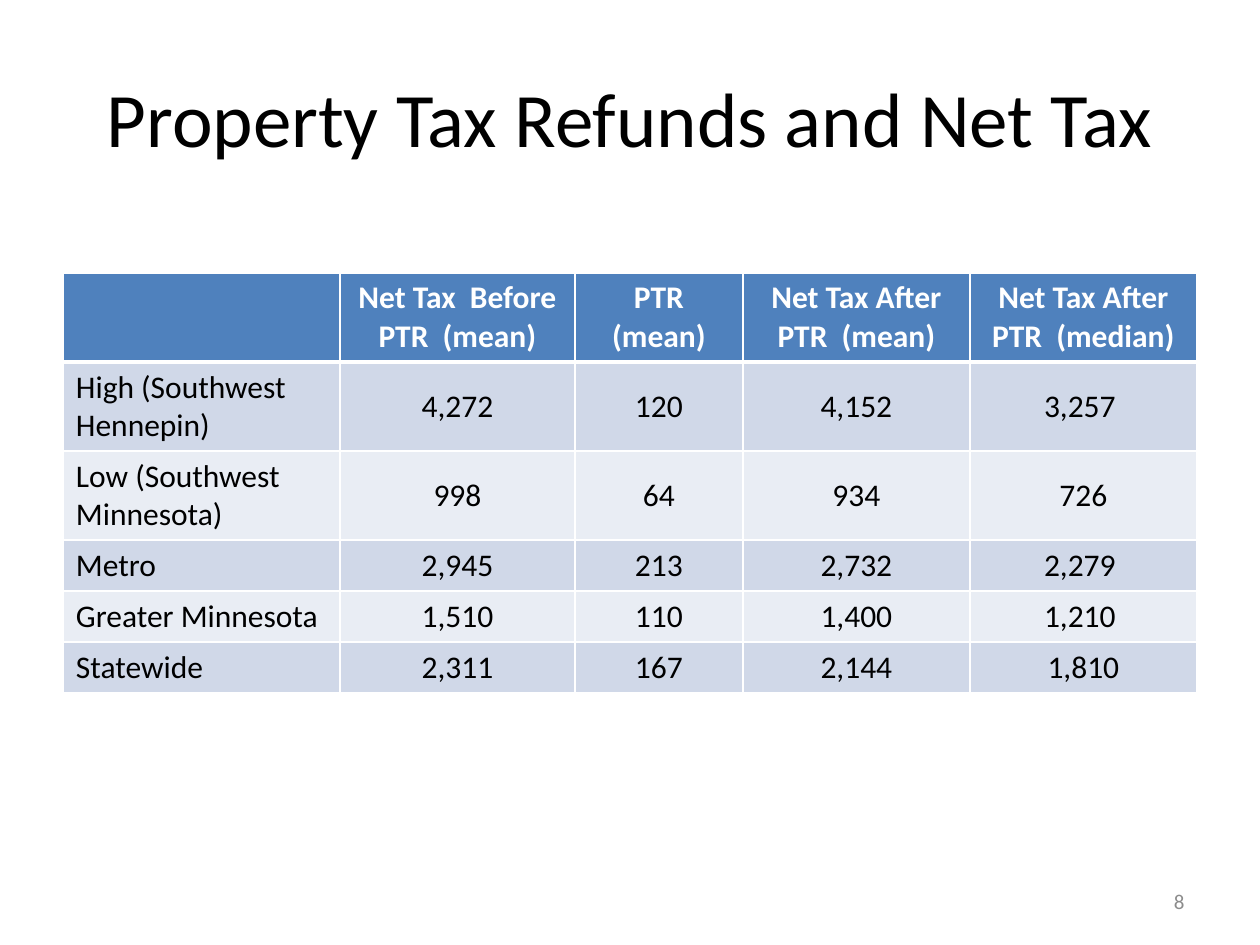
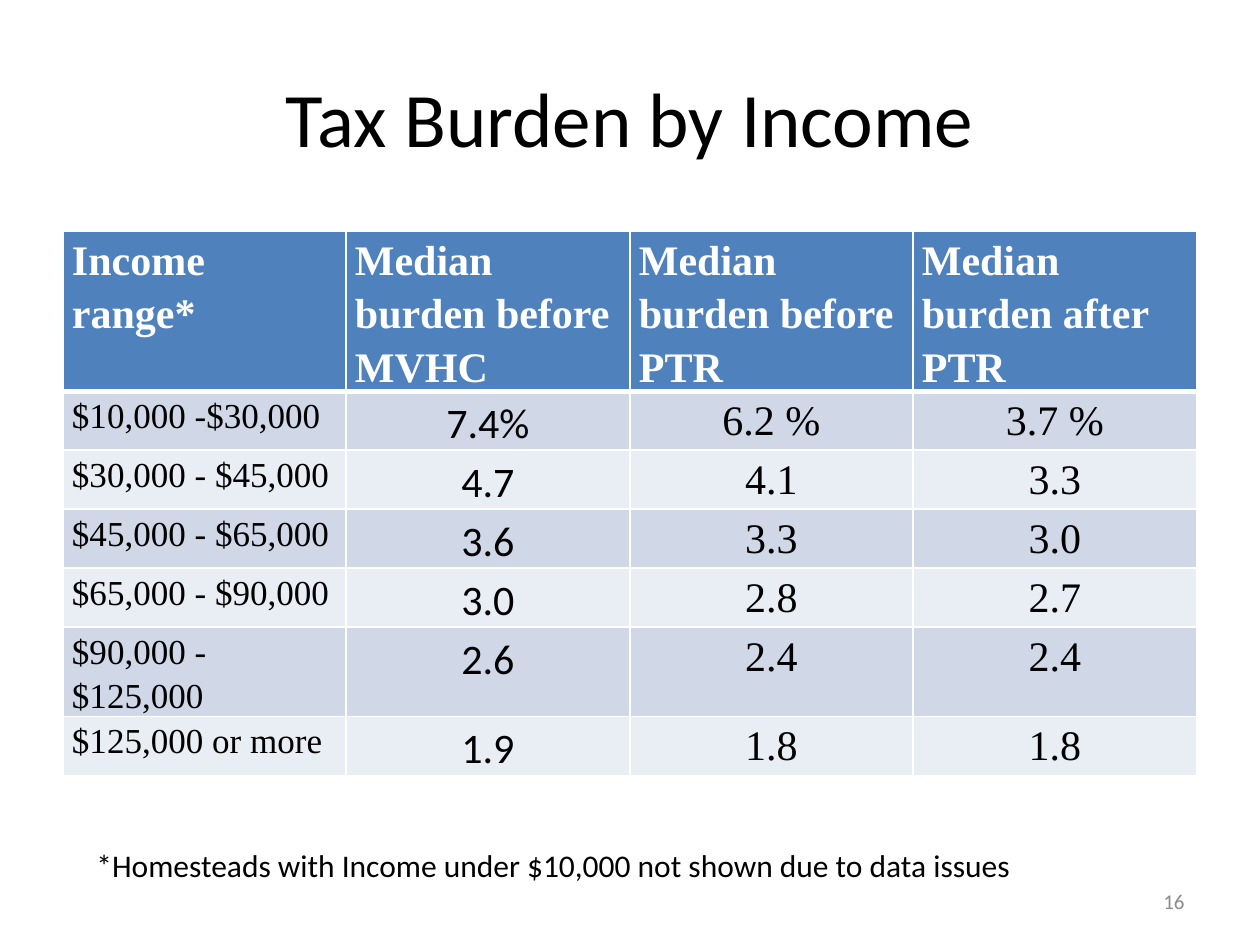
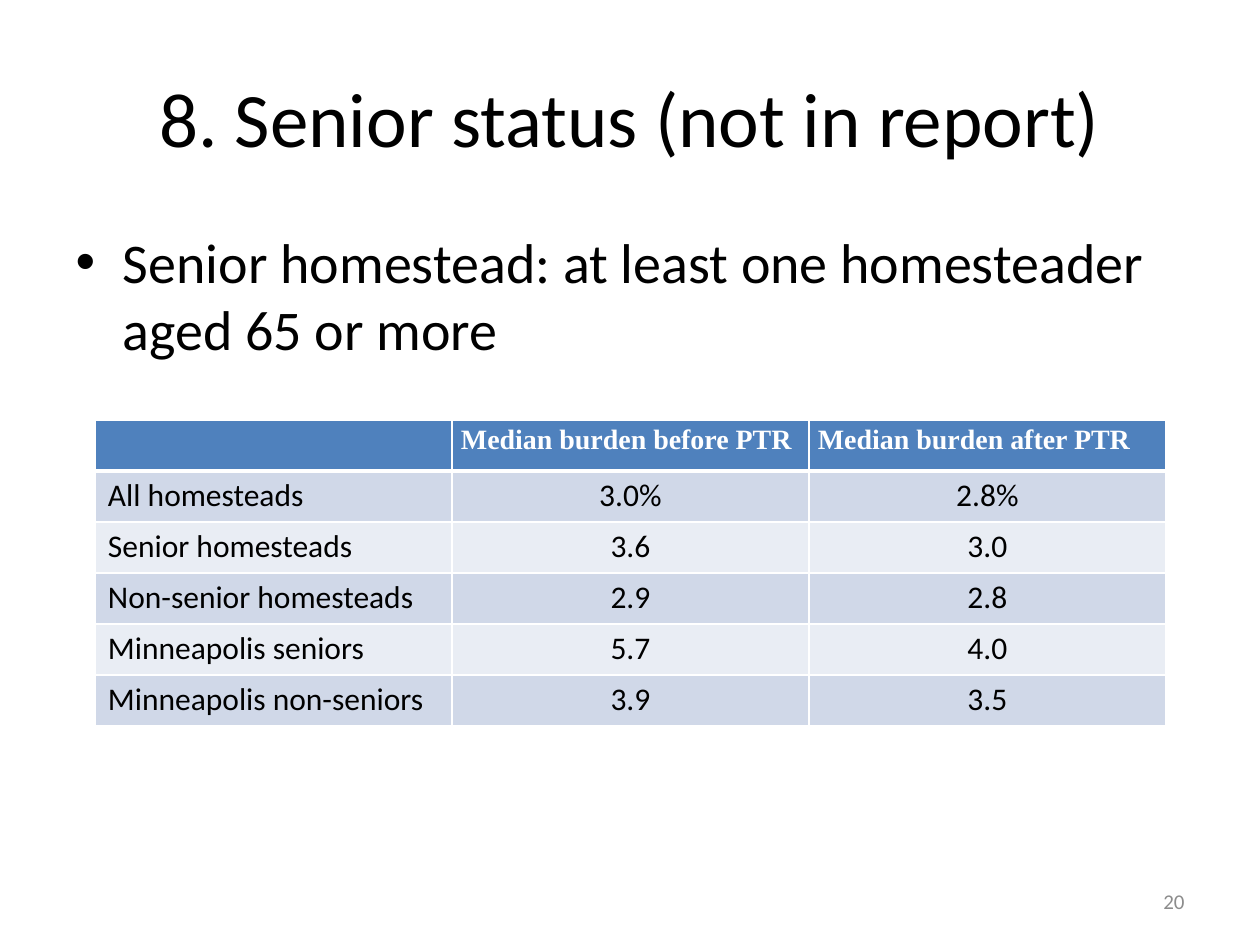
from dataclasses import dataclass

from lxml import etree
from pptx import Presentation
from pptx.dml.color import RGBColor
from pptx.enum.text import MSO_ANCHOR, MSO_AUTO_SIZE, PP_ALIGN
from pptx.oxml.ns import qn
from pptx.util import Emu, Pt

LEFT, CENTER, RIGHT = PP_ALIGN.LEFT, PP_ALIGN.CENTER, PP_ALIGN.RIGHT
TOP, MIDDLE = MSO_ANCHOR.TOP, MSO_ANCHOR.MIDDLE
FIXED, GROW = MSO_AUTO_SIZE.NONE, MSO_AUTO_SIZE.SHAPE_TO_FIT_TEXT
TITLE_AND_BODY, TITLE_ONLY = 1, 5
PX_PER_INCH = 126


@dataclass(frozen=True)
class Theme:
    sans: str = "Calibri"
    serif: str = "Times New Roman"
    ink: str = "000000"
    white: str = "FFFFFF"
    muted: str = "8C8C8C"
    header: str = "4F81BD"
    bands: tuple = ("D0D8E8", "E9EDF4")
    title_size: int = 44
    body_size: int = 32
    large_size: int = 24
    range_size: int = 20
    text_size: int = 18
    compact_size: int = 16
    number_size: int = 12
    grid_line: int = 1
    header_line: int = 3


THEME = Theme()


def px(length):
    return Emu(round(length * 914400 / PX_PER_INCH))


def write(frame, text, size=THEME.text_size, font=THEME.sans, color=THEME.ink,
          bold=False, align=LEFT, spacing=None):
    """Put one formatted paragraph into a text frame."""
    paragraph = frame.paragraphs[0]
    paragraph.alignment = align
    if spacing:
        paragraph.line_spacing = spacing
    run = paragraph.add_run()
    run.text = text
    run.font.size = Pt(size)
    run.font.name = font
    run.font.bold = bold
    run.font.color.rgb = RGBColor.from_string(color)


class Deck:
    def __init__(self, theme):
        self.theme = theme
        self.presentation = Presentation()
        self.presentation.slide_width = px(1260)
        self.presentation.slide_height = px(945)
        self.slide = None

    def place(self, shape, left, top, width, height):
        shape.left, shape.top = px(left), px(top)
        shape.width, shape.height = px(width), px(height)

    def start(self, title, layout=TITLE_ONLY):
        layouts = self.presentation.slide_layouts
        self.slide = self.presentation.slides.add_slide(layouts[layout])
        heading = self.slide.shapes.title
        self.place(heading, 63, 38, 1134, 157)
        heading.text_frame.auto_size = FIXED
        heading.text_frame.vertical_anchor = MIDDLE
        write(heading.text_frame, title, size=self.theme.title_size, align=CENTER)

    def body(self, text, left, top, width, height):
        bullets = self.slide.placeholders[1]
        self.place(bullets, left, top, width, height)
        bullets.text_frame.auto_size = FIXED
        write(bullets.text_frame, text, size=self.theme.body_size)

    def text(self, text, left, top, width, height, anchor=TOP, fit=FIXED, **style):
        box = self.slide.shapes.add_textbox(px(left), px(top), px(width), px(height))
        frame = box.text_frame
        frame.word_wrap = True
        frame.auto_size = fit
        frame.vertical_anchor = anchor
        write(frame, text, **style)

    def page_number(self, number):
        self.text(str(number), 903, 876, 294, 50, anchor=MIDDLE, align=RIGHT,
                  size=self.theme.number_size, color=self.theme.muted)

    def borders(self, cell, row):
        """Rule all four sides, heavier between header and body."""
        theme = self.theme
        weights = {
            "L": theme.grid_line,
            "R": theme.grid_line,
            "T": theme.header_line if row == 1 else theme.grid_line,
            "B": theme.header_line if row == 0 else theme.grid_line,
        }
        properties = cell._tc.get_or_add_tcPr()
        for side, weight in weights.items():
            line = etree.SubElement(properties, qn(f"a:ln{side}"), w=str(Pt(weight)))
            fill = etree.SubElement(line, qn("a:solidFill"))
            etree.SubElement(fill, qn("a:srgbClr"), val=theme.white)

    def cell(self, cell, text, row, anchor=TOP, inset=(13, 6), **style):
        self.borders(cell, row)
        bands = self.theme.bands
        fill = bands[(row - 1) % len(bands)] if row else self.theme.header
        cell.fill.solid()
        cell.fill.fore_color.rgb = RGBColor.from_string(fill)
        side, end = map(px, inset)
        cell.margin_left = cell.margin_right = side
        cell.margin_top = cell.margin_bottom = end
        cell.vertical_anchor = anchor
        if text:
            write(cell.text_frame, text, **style)

    def table(self, rows, left, top, widths, heights, header_style, column_styles):
        grid = self.slide.shapes.add_table(
            len(rows), len(widths), px(left), px(top),
            px(sum(widths)), px(sum(heights))).table
        for column, width in zip(grid.columns, widths):
            column.width = px(width)
        for line, height in zip(grid.rows, heights):
            line.height = px(height)
        header_style = dict(color=self.theme.white, bold=True, **header_style)
        for r, values in enumerate(rows):
            for c, value in enumerate(values):
                style = column_styles[c] if r else header_style
                self.cell(grid.cell(r, c), value, r, **style)


def refunds_slide(deck):
    deck.start("Property Tax Refunds and Net Tax")
    refunds = [
        ("", "Net Tax  Before PTR  (mean)", "PTR (mean)",
         "Net Tax After PTR  (mean)", "Net Tax After PTR  (median)"),
        ("High (Southwest Hennepin)", "4,272", "120", "4,152", "3,257 "),
        ("Low (Southwest Minnesota)", "998", "64", "934", "726"),
        ("Metro", "2,945", "213", "2,732", "2,279 "),
        ("Greater Minnesota", "1,510", "110", "1,400", "1,210 "),
        ("Statewide", "2,311", "167", "2,144", " 1,810 "),
    ]
    region = dict(anchor=MIDDLE)
    before = dict(anchor=MIDDLE, align=CENTER)
    after = dict(before, inset=(0, 0))
    deck.table(refunds, 63, 273, [277, 235, 168, 227, 227], [89] * 3 + [51] * 3,
               dict(align=CENTER), [region, before, before, after, after])
    deck.page_number(8)


def income_slide(deck):
    theme = deck.theme
    deck.start("Tax Burden by Income")
    burdens = [
        ("Income range*", "Median burden before MVHC",
         "Median burden before PTR", "Median burden after PTR"),
        ("$10,000 -$30,000", "7.4%", "6.2 %", "3.7 %"),
        ("$30,000 - $45,000", "4.7", "4.1", "3.3"),
        ("$45,000 - $65,000", "3.6", "3.3", "3.0"),
        ("$65,000 - $90,000", "3.0", "2.8", "2.7"),
        ("$90,000 - $125,000", "2.6", "2.4", "2.4"),
        ("$125,000 or more", "1.9", "1.8", "1.8"),
    ]
    header = dict(font=theme.serif, size=theme.large_size, spacing=1.15, inset=(9, 0))
    income_range = dict(header, size=theme.range_size)
    refund_burden = dict(header, align=CENTER)
    credit_burden = dict(refund_burden, font=theme.sans)
    deck.table(burdens, 63, 231, [283, 284] * 2, [159] + [59] * 4 + [89, 58],
               header, [income_range, credit_burden, refund_burden, refund_burden])
    deck.page_number(16)
    deck.text("*Homesteads with Income under $10,000 not shown due to data issues",
              84, 840, 987, 51, fit=GROW)


def senior_slide(deck):
    theme = deck.theme
    deck.start("8. Senior status (not in report)", TITLE_AND_BODY)
    deck.body("Senior homestead: at least one homesteader aged 65 or more",
              63, 221, 1134, 179)
    deck.page_number(20)
    seniors = [
        ("", "Median burden before PTR", "Median burden after PTR"),
        ("All homesteads", "3.0%", "2.8%"),
        ("Senior homesteads", "3.6", "3.0"),
        ("Non-senior homesteads", "2.9", "2.8"),
        ("Minneapolis seniors", "5.7", "4.0"),
        ("Minneapolis non-seniors", "3.9", "3.5"),
    ]
    header = dict(font=theme.serif, size=theme.compact_size, spacing=1.15, inset=(9, 0))
    burden = dict(align=CENTER)
    deck.table(seniors, 95, 420, [357] * 3, [51] * 6, header, [{}, burden, burden])


def main():
    deck = Deck(THEME)
    refunds_slide(deck)
    income_slide(deck)
    senior_slide(deck)
    deck.presentation.save("out.pptx")


if __name__ == "__main__":
    main()
